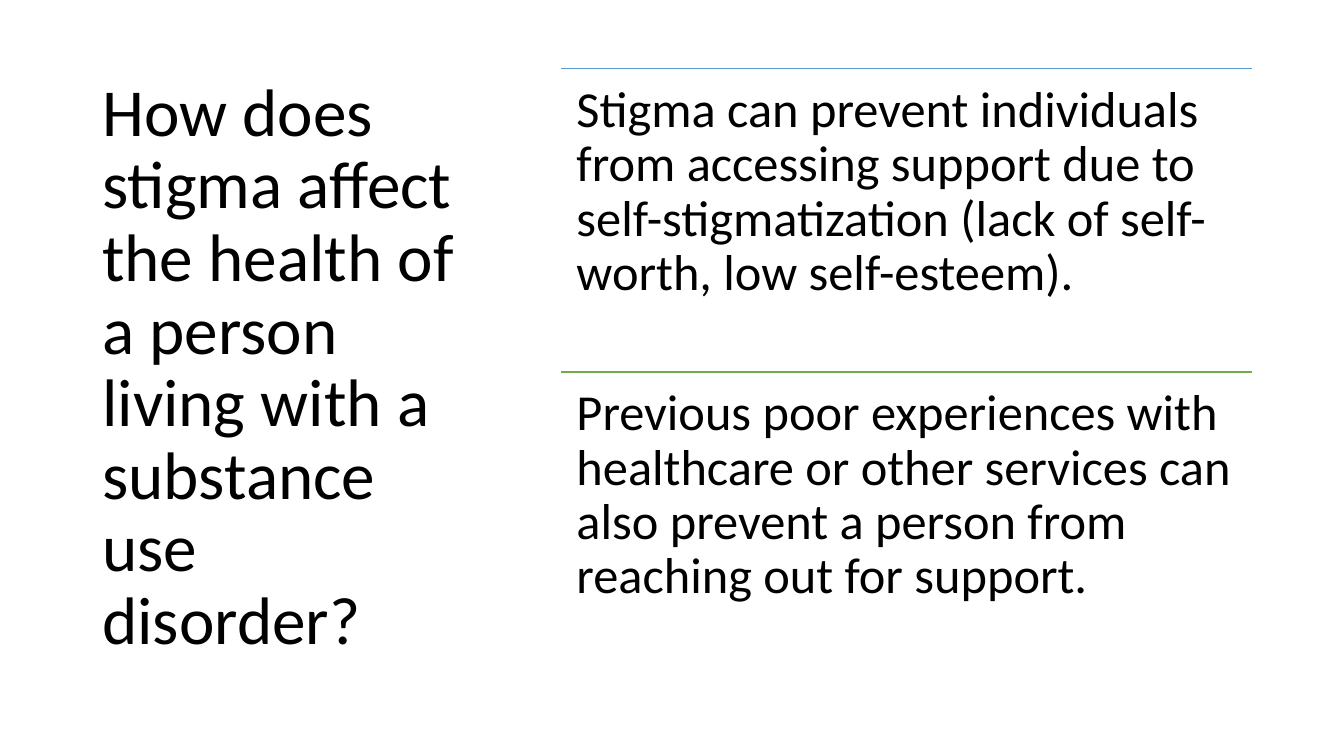
"""Build a slide on how stigma affects the health of people with a substance use disorder."""
from dataclasses import dataclass

from lxml.etree import SubElement
from pptx import Presentation
from pptx.dml.color import RGBColor
from pptx.enum.shapes import MSO_CONNECTOR as Connector
from pptx.enum.text import MSO_ANCHOR as Anchor
from pptx.oxml.ns import qn
from pptx.slide import Slide
from pptx.util import Pt

COLORS = {"text": "000000", "access": "5B9BD5", "experience": "70AD47"}
FONT = "Calibri"
REASON_LEFT, REASON_TOP = 401, 49
REASON_WIDTH, REASON_HEIGHT = 493.2, 216.7


@dataclass
class Passage:
    text: str
    left: float
    top: float
    width: float
    height: float
    size: float
    inset_x: float
    inset_y: float
    anchor: Anchor


@dataclass
class Reason:
    text: str
    color: str


QUESTION = Passage(
    "How does stigma affect the health of a person living with a substance use disorder?",
    66, 44, 266, 438.5, 48, 7.2, 3.6, Anchor.MIDDLE,
)
REASONS = [
    Reason(
        "Stigma can prevent individuals from accessing support due to "
        "self-stigmatization (lack of self-worth, low self-esteem).",
        "access",
    ),
    Reason(
        "Previous poor experiences with healthcare or other services can "
        "also prevent a person from reaching out for support.",
        "experience",
    ),
]


def add_passage(slide: Slide, passage: Passage) -> None:
    box = slide.shapes.add_textbox(
        Pt(passage.left), Pt(passage.top), Pt(passage.width), Pt(passage.height)
    )
    frame = box.text_frame
    frame.word_wrap = True
    frame.vertical_anchor = passage.anchor
    frame.margin_left = frame.margin_right = Pt(passage.inset_x)
    frame.margin_top = frame.margin_bottom = Pt(passage.inset_y)
    paragraph = frame.paragraphs[0]
    paragraph.text = passage.text
    paragraph.line_spacing = 0.9
    paragraph.font.name = FONT
    paragraph.font.size = Pt(passage.size)
    paragraph.font.color.rgb = RGBColor.from_string(COLORS["text"])


def add_reason(slide: Slide, reason: Reason, top: float) -> None:
    divider = slide.shapes.add_connector(
        Connector.STRAIGHT,
        Pt(REASON_LEFT), Pt(top), Pt(REASON_LEFT + REASON_WIDTH), Pt(top),
    )
    divider.line.color.rgb = RGBColor.from_string(COLORS[reason.color])
    divider.line.width = Pt(1)
    SubElement(divider._element.spPr, qn("a:effectLst"))
    add_passage(slide, Passage(
        reason.text, REASON_LEFT, top, REASON_WIDTH, REASON_HEIGHT,
        36, 10.8, 10.8, Anchor.TOP,
    ))


def main() -> None:
    deck = Presentation()
    deck.slide_width, deck.slide_height = Pt(960), Pt(540)
    slide = deck.slides.add_slide(deck.slide_layouts[6])
    add_passage(slide, QUESTION)
    for row, reason in enumerate(REASONS):
        add_reason(slide, reason, REASON_TOP + row * REASON_HEIGHT)
    deck.save("out.pptx")


if __name__ == "__main__":
    main()
